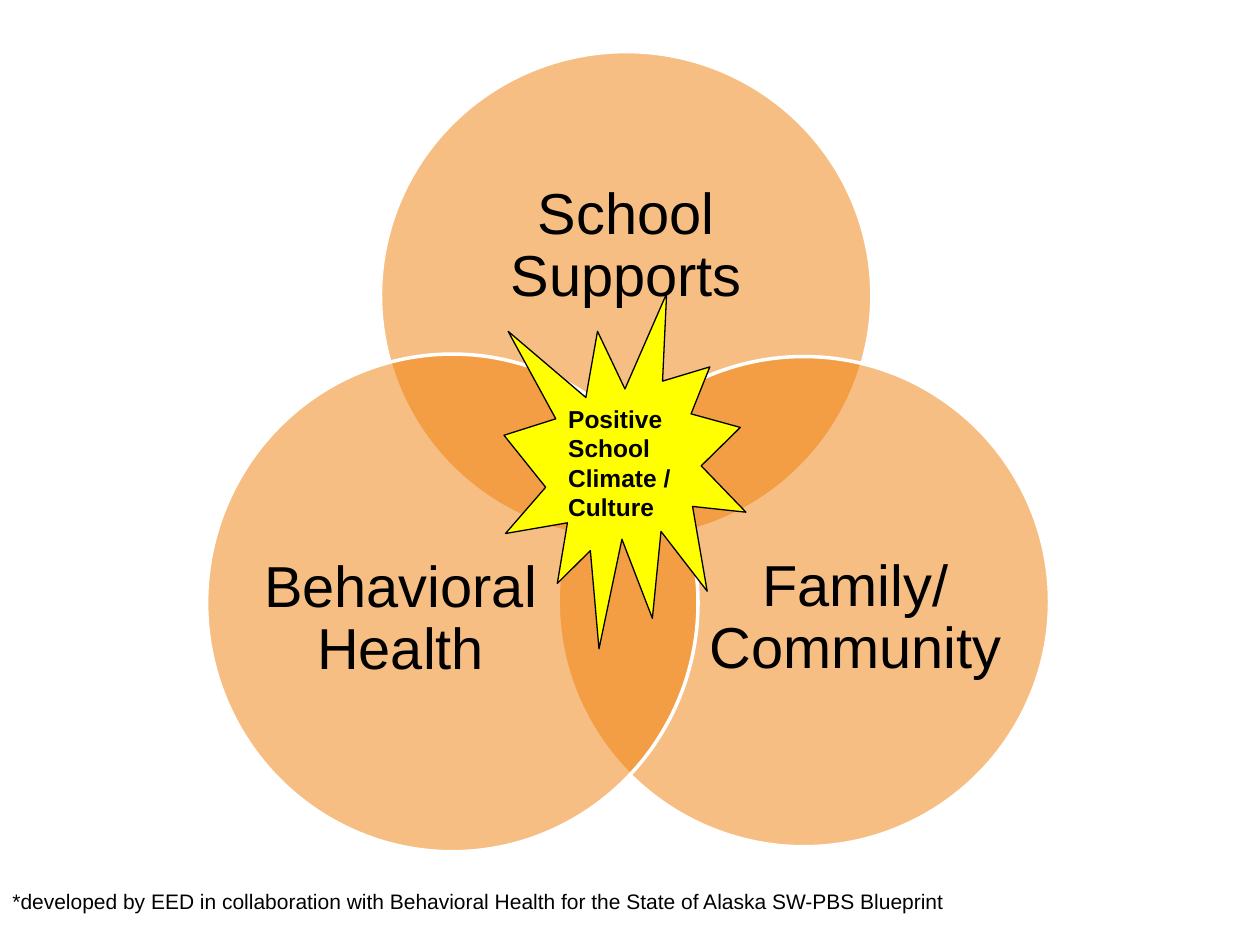
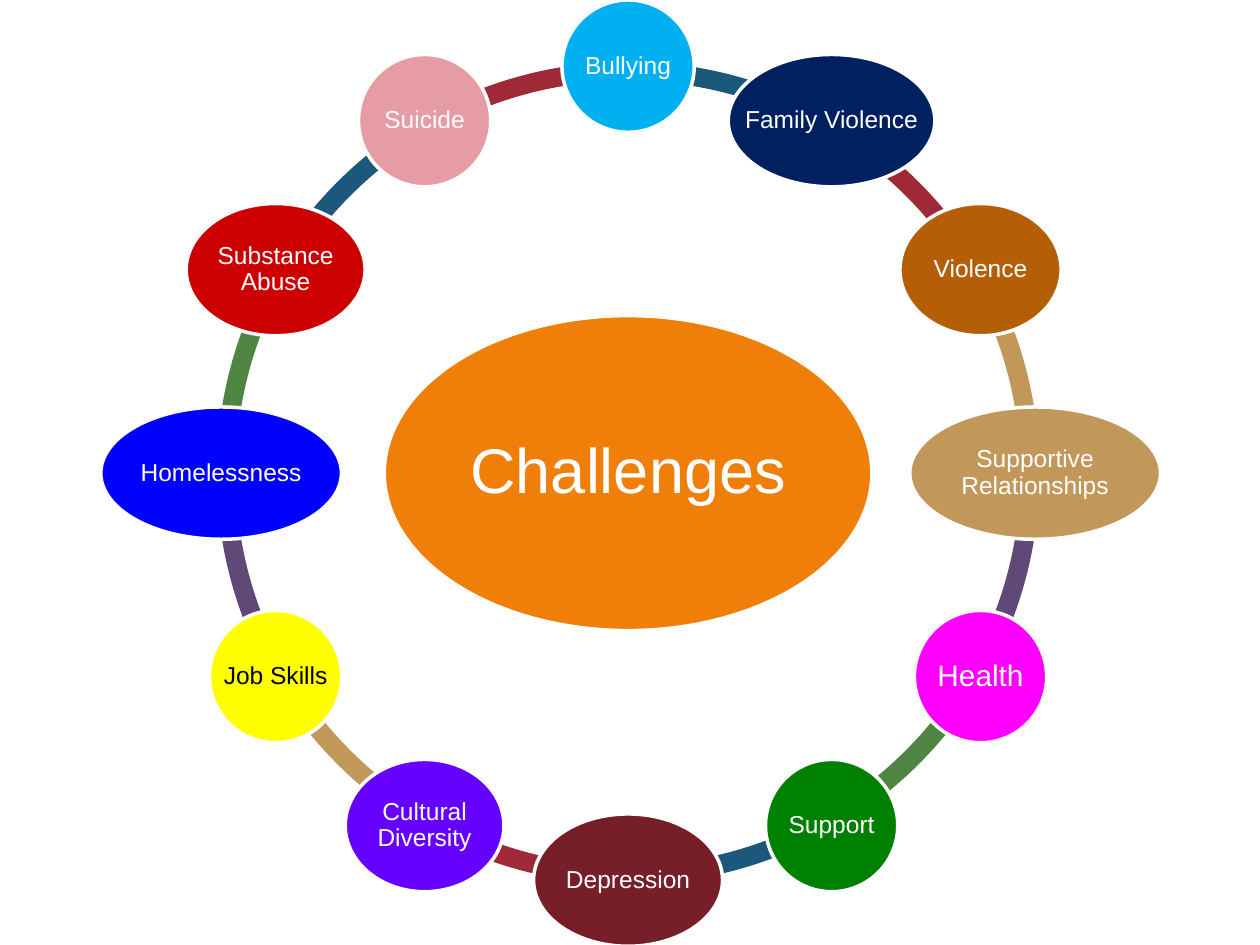
"""Build two slides: a Venn diagram of supports and a ring of challenges."""
from dataclasses import dataclass
from math import cos, radians, sin

from lxml.etree import SubElement
from pptx import Presentation
from pptx.dml.color import RGBColor
from pptx.enum.shapes import MSO_SHAPE as Shape
from pptx.enum.text import MSO_ANCHOR as Anchor, PP_ALIGN as Align
from pptx.oxml.ns import qn
from pptx.util import Inches, Pt


@dataclass(frozen=True)
class Theme:
    """Colours, font and type sizes of the deck."""
    font: str = "Arial"
    white: str = "FFFFFF"
    black: str = "000000"
    orange: str = "F07F09"
    yellow: str = "FFFF00"
    arcs: tuple = ("1B587C", "9F2936", "C19859", "604878", "4E8542")
    hub_size: int = 36
    venn_size: int = 33
    large_size: int = 17
    node_size: int = 14
    note_size: int = 12
    outline: float = 2
    thin: float = 0.75


T = Theme()

VENN = [
    ("School Supports", (1.38, 0, 3.9, 3.87), (1.9, 0.68, 2.86, 1.74)),
    ("Family/ Community", (2.79, 2.42, 3.9, 3.89), (3.98, 3.43, 2.34, 2.14)),
    ("Behavioral Health", (0, 2.4, 3.9, 3.95), (0.37, 3.42, 2.34, 2.18)),
]

NODES = [
    ("Bullying", 1.05, "00B0F0", T.white, T.node_size),
    ("Family Violence", 1.64, "002060", T.white, T.node_size),
    ("Violence", 1.28, "B45F07", T.white, T.node_size),
    ("Supportive Relationships", 1.99, "C19859", T.white, T.node_size),
    ("Health", 1.05, "FF00FF", T.white, T.large_size),
    ("Support", 1.05, "008000", T.white, T.node_size),
    ("Depression", 1.5, "771F28", T.white, T.node_size),
    ("Cultural Diversity", 1.26, "6600FF", T.white, T.node_size),
    ("Job Skills", 1.05, T.yellow, T.black, T.node_size),
    ("Homelessness", 1.91, "0000FF", T.white, T.node_size),
    ("Substance Abuse", 1.42, "CC0000", T.white, T.node_size),
    ("Suicide", 1.05, "E69CA4", T.white, T.node_size),
]


def shift(box, part):
    """Return a part's box moved from its container to the slide."""
    return box[0] + part[0], box[1] + part[1], part[2], part[3]


def centred(cx, cy, w, h):
    """Return the box of the given size around a centre point."""
    return cx - w / 2, cy - h / 2, w, h


def add_shape(s, kind, box, fill, line=None, width=T.outline, opacity=None):
    """Add a flat preset shape with optional outline and opacity percent."""
    sp = s.shapes.add_shape(kind, *map(Inches, box))
    sp.shadow.inherit = False
    sp.fill.solid()
    sp.fill.fore_color.rgb = RGBColor.from_string(fill)
    if opacity is not None:
        color = next(sp.fill._xPr.iter(qn("a:srgbClr")))
        SubElement(color, qn("a:alpha")).set("val", str(opacity * 1000))
    if line:
        sp.line.color.rgb = RGBColor.from_string(line)
        sp.line.width = Pt(width)
    else:
        sp.line.fill.background()
    return sp


def write(sp, text, size, color=T.black, bold=False, align=Align.LEFT):
    """Write one wrapped paragraph into a shape."""
    tf = sp.text_frame
    tf.word_wrap = True
    p = tf.paragraphs[0]
    p.alignment = align
    r = p.add_run()
    r.text = text
    r.font.name, r.font.size, r.font.bold = T.font, Pt(size), bold
    r.font.color.rgb = RGBColor.from_string(color)
    return p


def add_label(s, box, text, size, color=T.black, inset=0.0):
    """Add a centred label with tight lines."""
    sp = s.shapes.add_textbox(*map(Inches, box))
    tf = sp.text_frame
    tf.margin_left = tf.margin_right = Inches(inset)
    tf.margin_top = tf.margin_bottom = Inches(inset)
    tf.vertical_anchor = Anchor.MIDDLE
    write(sp, text, size, color, align=Align.CENTER).line_spacing = 0.9


def add_venn(s, box):
    """Draw three overlapping circles with a burst where they meet."""
    for text, circle, label in VENN:
        add_shape(s, Shape.OVAL, shift(box, circle), T.orange, T.white, opacity=50)
        add_label(s, shift(box, label), text, T.venn_size)
    burst = add_shape(s, Shape.EXPLOSION1, shift(box, (2.36, 1.92, 1.92, 2.82)),
                      T.yellow, T.black, T.thin)
    burst.text_frame.vertical_anchor = Anchor.TOP
    write(burst, "Positive School Climate / Culture", T.node_size, bold=True)


def add_footnote(s, box, text):
    """Add the note along the bottom edge."""
    write(s.shapes.add_textbox(*map(Inches, box)), text, T.note_size)


def add_ring(s, box):
    """Draw a ring of arcs, a central hub and evenly spaced nodes."""
    x, y, w, h = box
    cx, cy, radius = x + w / 2, y + h / 2, 3.23
    step = 360 / len(NODES)
    starts = [(270 + i * step) % 360 for i in range(len(NODES))]
    for i, start in enumerate(starts):
        arc = add_shape(s, Shape.BLOCK_ARC, box, T.arcs[i % len(T.arcs)])
        for j, value in enumerate((start * 0.6, (start + step) % 360 * 0.6, 0.023)):
            arc.adjustments[j] = value
    hub = centred(cx, cy, 3.87, 2.5)
    add_shape(s, Shape.OVAL, hub, T.orange, T.white)
    add_label(s, hub, "Challenges", T.hub_size, T.white, 0.05)
    for angle, (text, width, fill, color, size) in zip(starts, NODES):
        a = radians(angle)
        node = centred(cx + radius * cos(a), cy + radius * sin(a), width, 1.05)
        add_shape(s, Shape.OVAL, node, fill, T.white)
        add_label(s, node, text, size, color, 0.02)


def main():
    """Build and save the deck."""
    prs = Presentation()
    prs.slide_width, prs.slide_height = Inches(10), Inches(7.5)
    blank = prs.slide_layouts[6]
    supports = prs.slides.add_slide(blank)
    add_venn(supports, (1.64, 0.41, 6.69, 6.35))
    add_footnote(supports, (0, 7, 9.98, 0.3),
                 "*developed by EED in collaboration with Behavioral Health "
                 "for the State of Alaska SW-PBS Blueprint")
    add_ring(prs.slides.add_slide(blank), (1.72, 0.49, 6.53, 6.53))
    prs.save("out.pptx")


if __name__ == "__main__":
    main()
